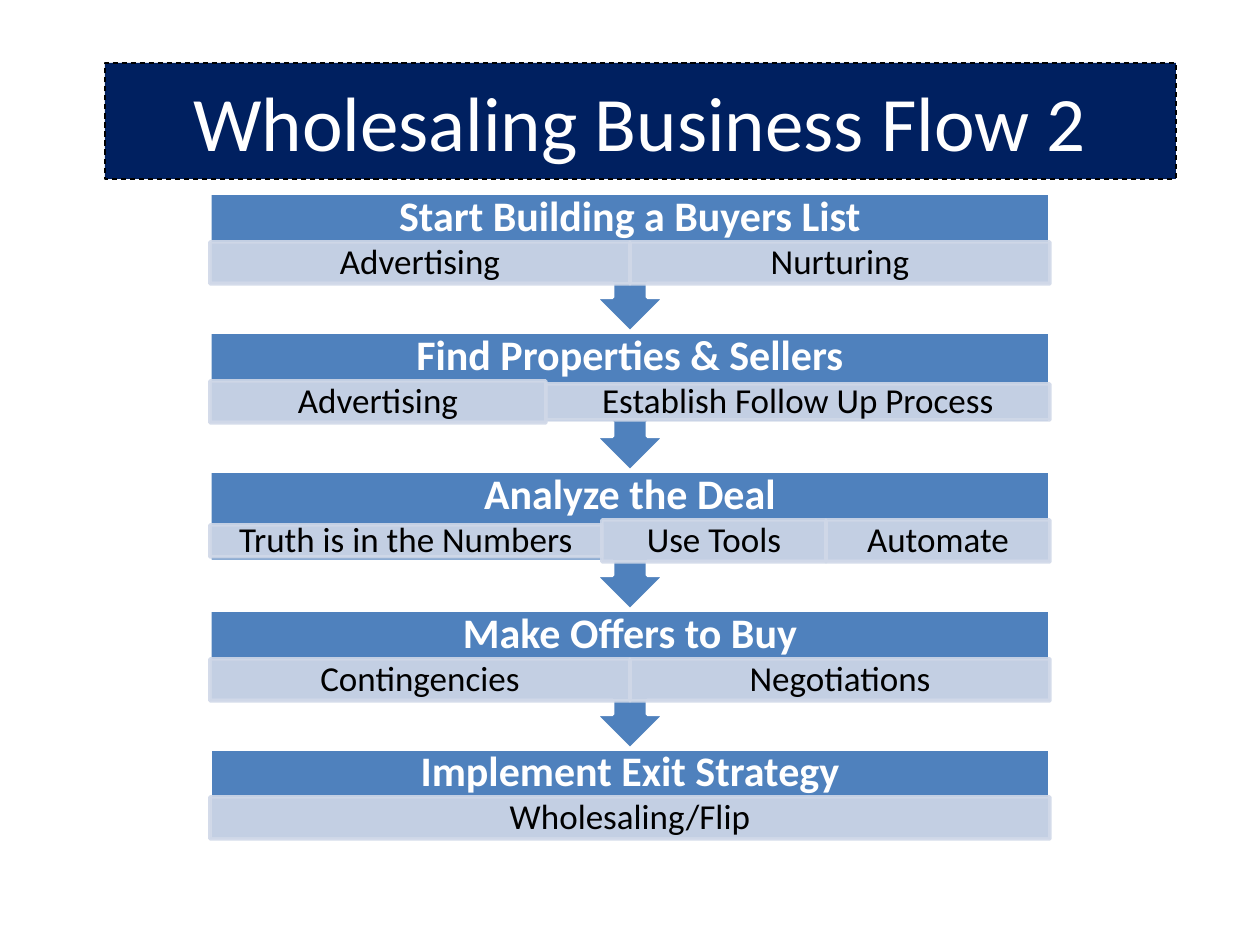
from lxml import etree
from pptx import Presentation
from pptx.dml.color import RGBColor
from pptx.enum.dml import MSO_LINE
from pptx.enum.shapes import MSO_SHAPE
from pptx.enum.text import MSO_ANCHOR, PP_ALIGN
from pptx.oxml.ns import qn
from pptx.util import Emu, Pt

RECT = MSO_SHAPE.RECTANGLE
CALLOUT = MSO_SHAPE.UP_ARROW_CALLOUT
DASH = MSO_LINE.DASH
MIDDLE = MSO_ANCHOR.MIDDLE
CENTER = PP_ALIGN.CENTER
PX = 914400 // 126
LEFT, WIDTH, TOP, STEP = 210, 840, 193, 139
BODY_H, CELL_H = 91, 42

STAGES = [
    ("Start Building a Buyers List",
     [("Advertising", 420, 42), ("Nurturing", 420, 42)]),
    ("Find Properties & Sellers",
     [("Advertising", 336, 42), ("Establish Follow Up Process", 504, 36)]),
    ("Analyze the Deal",
     [("Truth is in the Numbers", 392, 32), ("Use Tools", 224, 42), ("Automate", 224, 42)]),
    ("Make Offers to Buy",
     [("Contingencies", 420, 42), ("Negotiations", 420, 42)]),
    ("Implement Exit Strategy",
     [("Wholesaling/Flip", 840, 42)]),
]

prs = Presentation()
prs.slide_width, prs.slide_height = Emu(1260 * PX), Emu(945 * PX)
s = prs.slides.add_slide(prs.slide_layouts[6])


def add_box(kind, x, y, w, h, fill, line, line_pt):
    sp = s.shapes.add_shape(kind, x * PX, y * PX, w * PX, h * PX)
    sp.shadow.inherit = False
    sp.fill.solid()
    sp.fill.fore_color.rgb = RGBColor.from_string(fill)
    sp.line.color.rgb = RGBColor.from_string(line)
    sp.line.width = Pt(line_pt)
    return sp


def add_text(sp, text, size, color, bold, spacing, inset_x, inset_y):
    tf = sp.text_frame
    tf.word_wrap = True
    tf.vertical_anchor = MIDDLE
    tf.margin_left = tf.margin_right = inset_x * PX
    tf.margin_top = tf.margin_bottom = inset_y * PX
    p = tf.paragraphs[0]
    p.alignment = CENTER
    p.line_spacing = spacing
    r = p.add_run()
    r.text = text
    r.font.name = "Calibri"
    r.font.size = Pt(size)
    r.font.bold = bold
    r.font.color.rgb = RGBColor.from_string(color)


title = add_box(RECT, 105, 63, 1071, 116, "002060", "000000", 0.75)
title.line.dash_style = DASH
add_text(title, "Wholesaling Business Flow 2", 44, "FFFFFF", False, 1.0, 13, 6)

last = len(STAGES) - 1
for i, (heading, cells) in reversed(list(enumerate(STAGES))):
    y = TOP + i * STEP
    if i == last:
        add_box(RECT, LEFT, y, WIDTH, BODY_H, "4F81BD", "FFFFFF", 2)
        head_h = 48
    else:
        callout = add_box(CALLOUT, LEFT, y, WIDTH, STEP, "4F81BD", "FFFFFF", 2)
        callout.rotation = 180
        head_h = 49
    tb = s.shapes.add_textbox(LEFT * PX, y * PX, WIDTH * PX, head_h * PX)
    add_text(tb, heading, 24, "FFFFFF", True, 0.9, 24, 24)

    x = LEFT
    for text, w, h in cells:
        cell = add_box(RECT, x, y + head_h + (CELL_H - h) // 2, w, h, "D0D8E8", "D0D8E8", 2)
        for clr in cell._element.spPr.iter(qn("a:srgbClr")):
            etree.SubElement(clr, qn("a:alpha"), val="90000")
        add_text(cell, text, 20, "000000", False, 0.9, 20, 4)
        x += w

prs.save("out.pptx")
